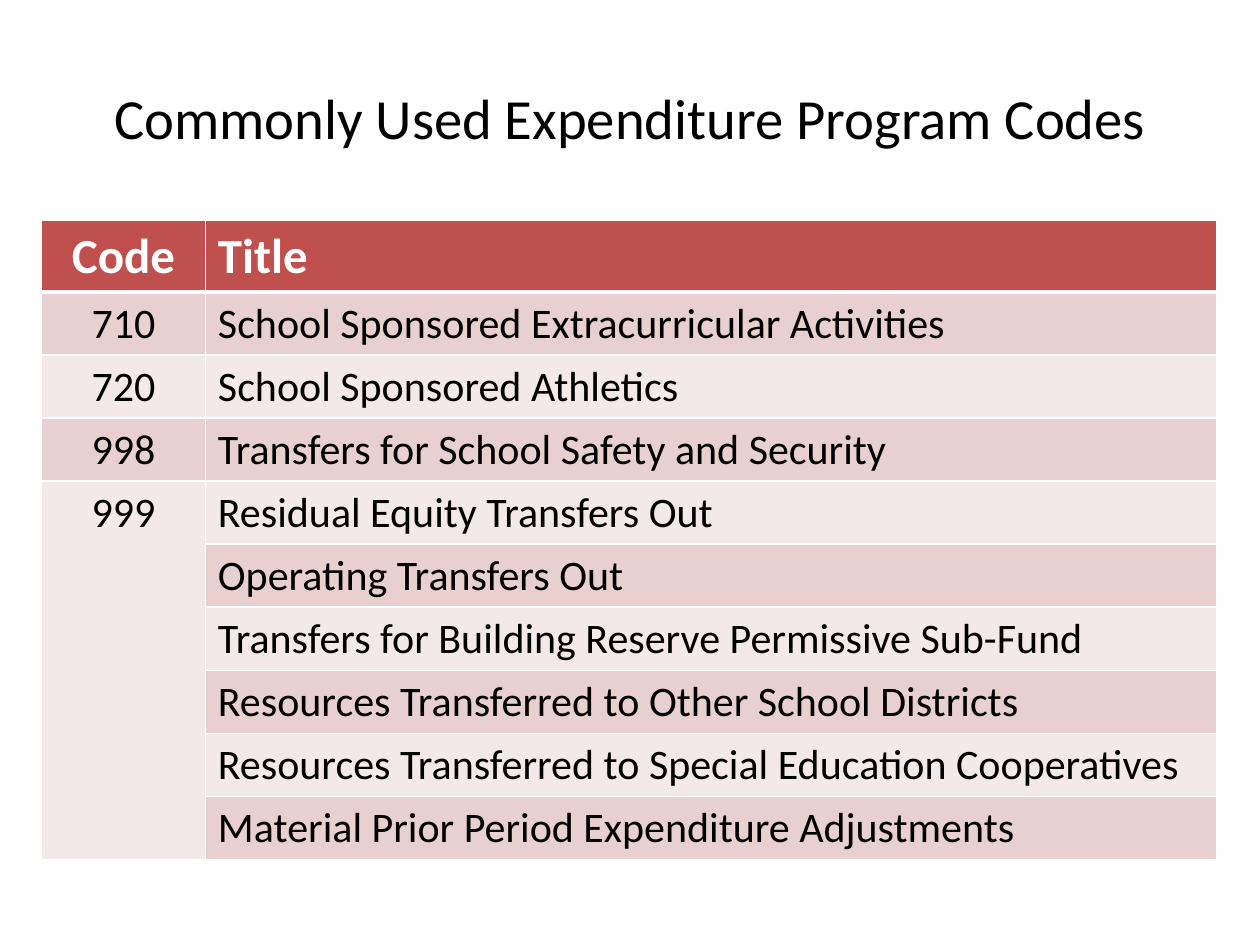
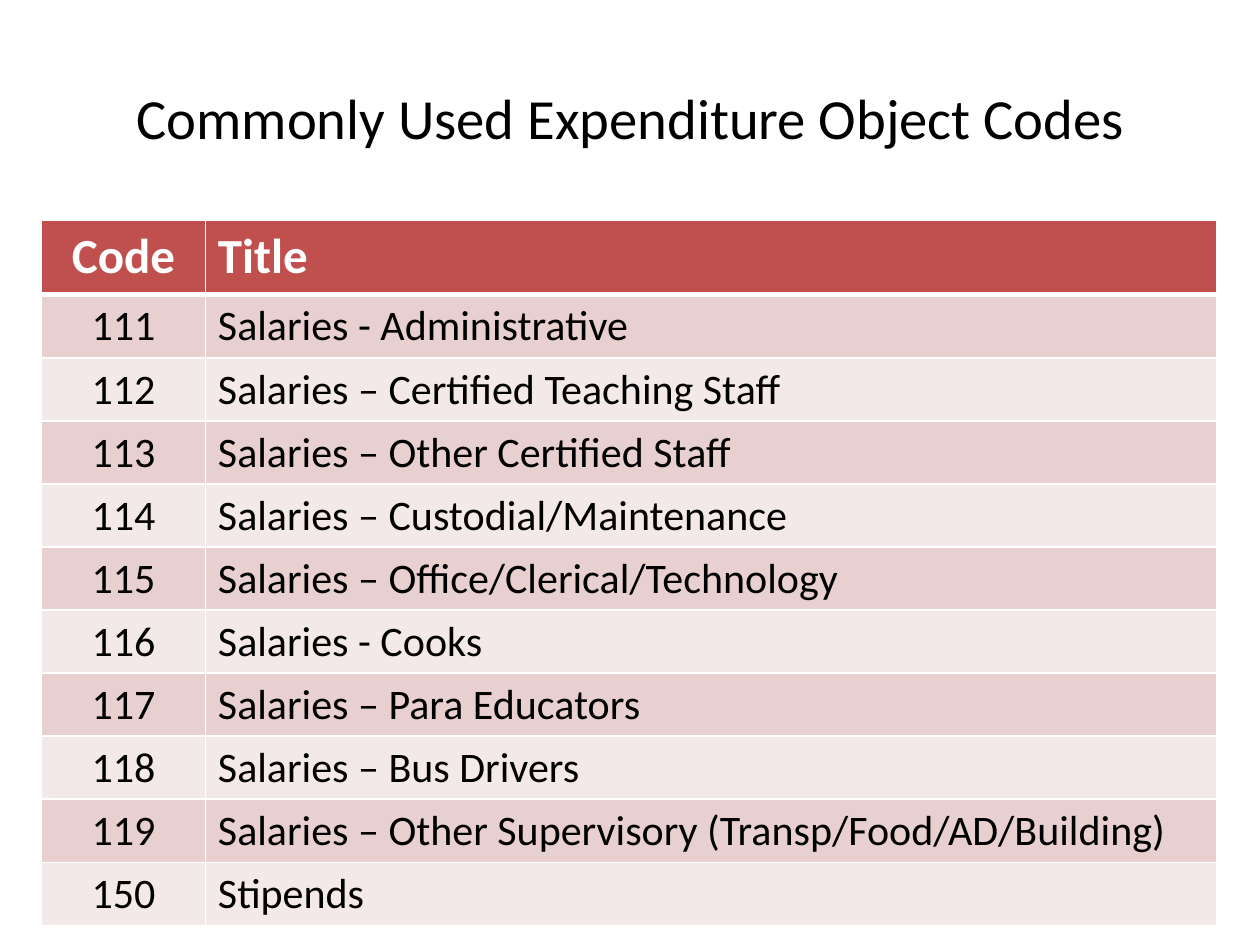
import pptx
import pptx.util
import pptx.dml.color
import pptx.enum.text
import pptx.oxml
import pptx.oxml.ns
import lxml.etree

Inches = pptx.util.Inches
Pt = pptx.util.Pt
RGBColor = pptx.dml.color.RGBColor
ALIGN = pptx.enum.text.PP_ALIGN
qn = pptx.oxml.ns.qn

BLACK = RGBColor(0x00, 0x00, 0x00)
WHITE = RGBColor(0xFF, 0xFF, 0xFF)
HEADER_RED = RGBColor(0xC0, 0x50, 0x4D)
BANDS = (RGBColor(0xE8, 0xD0, 0xD0), RGBColor(0xF4, 0xE9, 0xE9))
FONT = "Calibri"
COLUMN_WIDTHS = (1.3, 8.03)
TABLE_BOX = (0.33, 1.75, sum(COLUMN_WIDTHS))
HEADINGS = ("Code", "Title")

PROGRAM_CODES = [
    ("710", "School Sponsored Extracurricular Activities"),
    ("720", "School Sponsored Athletics"),
    ("998", "Transfers for School Safety and Security"),
    ("999", "Residual Equity Transfers Out"),
    ("", "Operating Transfers Out"),
    ("", "Transfers for Building Reserve Permissive Sub-Fund"),
    ("", "Resources Transferred to Other School Districts"),
    ("", "Resources Transferred to Special Education Cooperatives"),
    ("", "Material Prior Period Expenditure Adjustments"),
]
OBJECT_CODES = [
    ("111", "Salaries - Administrative"),
    ("112", "Salaries – Certified Teaching Staff"),
    ("113", "Salaries – Other Certified Staff"),
    ("114", "Salaries – Custodial/Maintenance"),
    ("115", "Salaries – Office/Clerical/Technology"),
    ("116", "Salaries - Cooks"),
    ("117", "Salaries – Para Educators"),
    ("118", "Salaries – Bus Drivers"),
    ("119", "Salaries – Other Supervisory (Transp/Food/AD/Building)"),
    ("150", "Stipends"),
]


def write(frame, text, size, color, bold=False, align=ALIGN.LEFT):
    para = frame.paragraphs[0]
    para.alignment = align
    span = para.add_run()
    span.text = text
    span.font.name = FONT
    span.font.size = Pt(size)
    span.font.bold = bold
    span.font.color.rgb = color


def add_title(slide, text, box):
    title = slide.shapes.add_textbox(*map(Inches, box))
    frame = title.text_frame
    frame.word_wrap = True
    frame.vertical_anchor = pptx.enum.text.MSO_ANCHOR.MIDDLE
    write(frame, text, 32.4, BLACK, align=ALIGN.CENTER)


def set_borders(cell, top, bottom):
    properties = cell._tc.get_or_add_tcPr()
    for side, width in (("L", 1), ("R", 1), ("T", top), ("B", bottom)):
        line = lxml.etree.SubElement(properties, qn(f"a:ln{side}"), w=str(Pt(width)))
        fill = lxml.etree.SubElement(line, qn("a:solidFill"))
        lxml.etree.SubElement(fill, qn("a:srgbClr"), val=str(WHITE))


def style_cell(cell, text, row, column):
    header = row == 0
    set_borders(cell, top=3 if row == 1 else 1, bottom=3 if header else 1)
    cell.fill.solid()
    cell.fill.fore_color.rgb = HEADER_RED if header else BANDS[(row - 1) % 2]
    write(cell.text_frame, text, 28 if header else 24, WHITE if header else BLACK,
          bold=header, align=ALIGN.CENTER if column == 0 else ALIGN.LEFT)


def merge_shared_codes(table, rows):
    start = 0
    for index in range(1, len(rows) + 1):
        if index == len(rows) or rows[index][0]:
            if index - start > 1:
                table.cell(start, 0).merge(table.cell(index - 1, 0))
            start = index


def add_code_table(slide, codes, box, header_height, row_height):
    rows = [HEADINGS, *codes]
    heights = [header_height] + [row_height] * len(codes)
    left, top, width = box
    table = slide.shapes.add_table(
        len(rows), len(HEADINGS), Inches(left), Inches(top),
        Inches(width), Inches(sum(heights))).table
    for column, column_width in zip(table.columns, COLUMN_WIDTHS):
        column.width = Inches(column_width)
    for row, height in zip(table.rows, heights):
        row.height = Inches(height)
    merge_shared_codes(table, rows)
    for row, texts in enumerate(rows):
        for column, text in enumerate(texts):
            cell = table.cell(row, column)
            if not cell.is_spanned:
                style_cell(cell, text, row, column)


def add_code_slide(deck, title, title_box, codes, header_height, row_height):
    slide = deck.slides.add_slide(deck.slide_layouts[6])
    add_title(slide, title, title_box)
    add_code_table(slide, codes, TABLE_BOX, header_height, row_height)


def main():
    deck = pptx.Presentation()
    deck.slide_width = Inches(10)
    deck.slide_height = Inches(7.5)
    add_code_slide(deck, "Commonly Used Expenditure Program Codes",
                   (0.5, 0.3, 9, 1.25), PROGRAM_CODES, 0.54, 0.46)
    add_code_slide(deck, "Commonly Used Expenditure Object Codes",
                   (0.92, 0.3, 8.17, 1.25), OBJECT_CODES, 0.59, 0.41)
    deck.save("out.pptx")


if __name__ == "__main__":
    main()
